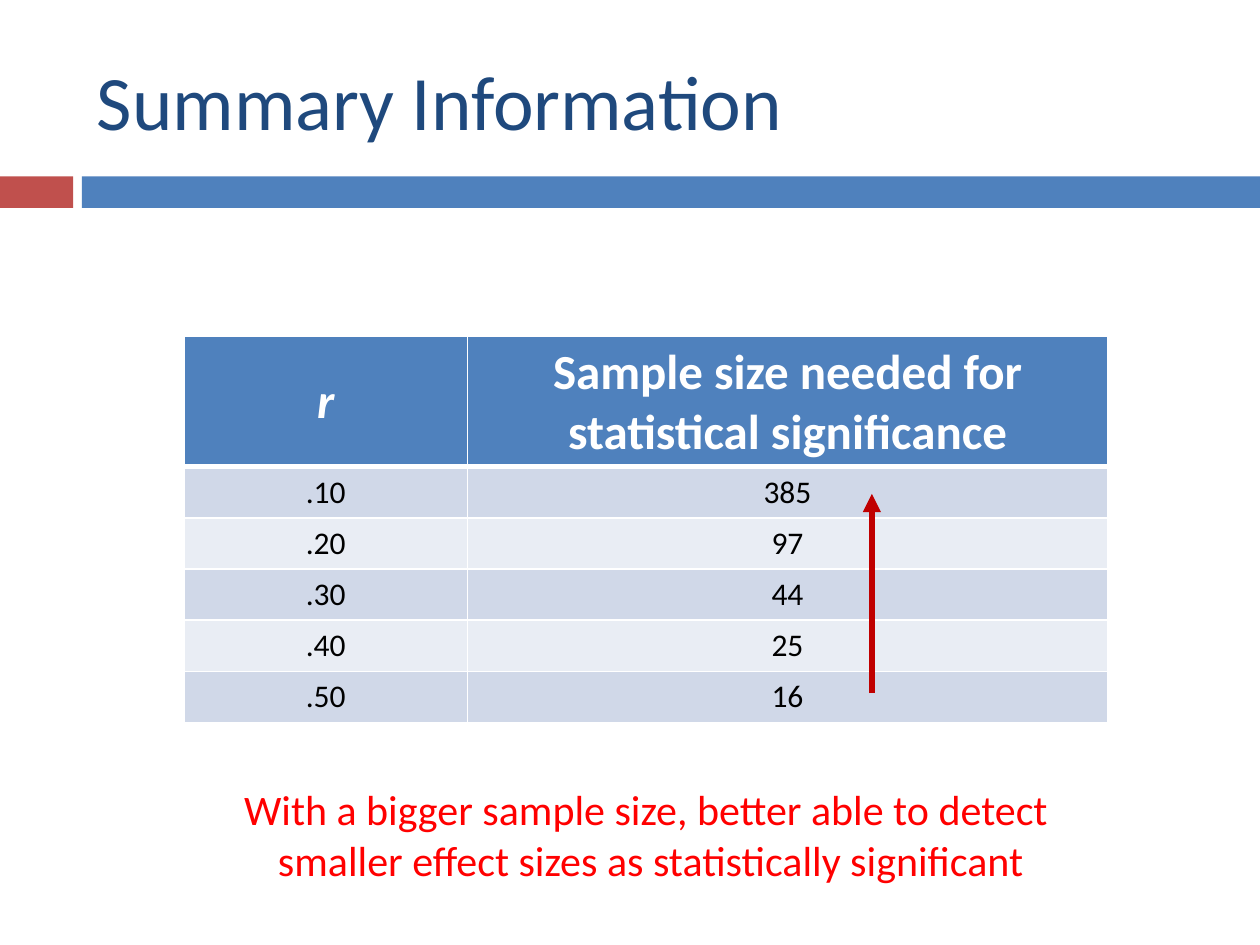
from lxml import etree
from pptx import Presentation
from pptx.dml.color import RGBColor
from pptx.enum.shapes import MSO_CONNECTOR, MSO_SHAPE
from pptx.enum.text import MSO_ANCHOR, PP_ALIGN
from pptx.oxml.ns import qn
from pptx.util import Inches, Pt

RECTANGLE = MSO_SHAPE.RECTANGLE
STRAIGHT = MSO_CONNECTOR.STRAIGHT
MIDDLE, TOP = MSO_ANCHOR.MIDDLE, MSO_ANCHOR.TOP
LEFT, CENTER = PP_ALIGN.LEFT, PP_ALIGN.CENTER

FONT = "Calibri"
COLORS = {
    "title": "1F497D", "accent": "C0504D", "bar": "4F81BD",
    "odd_row": "D0D8E8", "even_row": "E9EDF4", "white": "FFFFFF",
    "black": "000000", "conclusion": "FF0000", "arrow": "C00000",
}
HEADINGS = ["r", "Sample size needed for statistical significance"]
SAMPLE_SIZES = [(".10", "385"), (".20", "97"), (".30", "44"), (".40", "25"), (".50", "16")]
CONCLUSION = [
    "With a bigger sample size, better able to detect ",
    "smaller effect sizes as statistically significant",
]


def rgb(name):
    """Return the named palette colour."""
    return RGBColor.from_string(COLORS[name])


def add_run(paragraph, text, size, color, bold=False, italic=False):
    """Append one formatted run to a paragraph."""
    run = paragraph.add_run()
    run.text = text
    run.font.name, run.font.size = FONT, Pt(size)
    run.font.bold, run.font.italic = bold, italic
    run.font.color.rgb = rgb(color)


def add_text(slide, box, lines, size, color, align, anchor, wrap):
    """Place one paragraph of broken lines in a text box."""
    frame = slide.shapes.add_textbox(*map(Inches, box)).text_frame
    frame.word_wrap, frame.vertical_anchor = wrap, anchor
    paragraph = frame.paragraphs[0]
    paragraph.alignment = align
    for index, line in enumerate(lines):
        if index:
            paragraph.add_line_break()
        add_run(paragraph, line, size, color)


def add_divider(slide, left, top, width, height):
    """Draw the accent block and the bar beside it."""
    accent_width, gap = 0.58, 0.07
    bar_offset = accent_width + gap
    for offset, part_width, color in (
        (0, accent_width, "accent"),
        (bar_offset, width - bar_offset, "bar"),
    ):
        block = slide.shapes.add_shape(
            RECTANGLE, Inches(left + offset), Inches(top), Inches(part_width), Inches(height))
        block.shadow.inherit = False
        block.fill.solid()
        block.fill.fore_color.rgb = rgb(color)
        block.line.fill.background()


def set_borders(cell, bottom_width):
    """Give a cell white borders with its own bottom width."""
    properties = cell._tc.get_or_add_tcPr()
    for side, width in (("L", 1), ("R", 1), ("T", 1), ("B", bottom_width)):
        border = etree.SubElement(properties, qn(f"a:ln{side}"), w=str(Pt(width)))
        fill = etree.SubElement(border, qn("a:solidFill"))
        etree.SubElement(fill, qn("a:srgbClr"), val=COLORS["white"])


def fill_cell(cell, text, fill, size, color, anchor, bold=False, italic=False, bottom_width=1):
    """Style one table cell and write its text."""
    set_borders(cell, bottom_width)
    cell.fill.solid()
    cell.fill.fore_color.rgb = rgb(fill)
    cell.vertical_anchor = anchor
    paragraph = cell.text_frame.paragraphs[0]
    paragraph.alignment = CENTER
    add_run(paragraph, text, size, color, bold, italic)


def add_sample_table(slide, left, top, width, height):
    """Build the table of effect sizes and sample sizes."""
    effect_width, header_height = 2.25, 1.03
    row_height = (height - header_height) / len(SAMPLE_SIZES)
    table = slide.shapes.add_table(
        len(SAMPLE_SIZES) + 1, len(HEADINGS), *map(Inches, (left, top, width, height))).table
    table.columns[0].width = Inches(effect_width)
    table.columns[1].width = Inches(width - effect_width)
    for index, row in enumerate(table.rows):
        row.height = Inches(row_height if index else header_height)
    for column, heading in enumerate(HEADINGS):
        fill_cell(table.cell(0, column), heading, "bar", 28, "white", MIDDLE,
                  bold=True, italic=column == 0, bottom_width=3)
    for index, values in enumerate(SAMPLE_SIZES, start=1):
        fill = "odd_row" if index % 2 else "even_row"
        for column, value in enumerate(values):
            fill_cell(table.cell(index, column), value, fill, 18, "black",
                      TOP if column else MIDDLE)


def add_growth_arrow(slide, x, bottom, top):
    """Draw the upward arrow beside the sample sizes."""
    arrow = slide.shapes.add_connector(STRAIGHT, *map(Inches, (x, bottom, x, top)))
    arrow.line.color.rgb = rgb("arrow")
    arrow.line.width = Pt(3.5)
    etree.SubElement(arrow.line._get_or_add_ln(), qn("a:tailEnd"), type="triangle")
    etree.SubElement(arrow._element.spPr, qn("a:effectLst"))


def main():
    """Build and save the summary slide."""
    presentation = Presentation()
    presentation.slide_width, presentation.slide_height = Inches(10), Inches(7.5)
    slide = presentation.slides.add_slide(presentation.slide_layouts[6])
    add_divider(slide, 0, 1.4, 10, 0.25)
    add_text(slide, (0.67, 0.25, 8.92, 1.08), ["Summary Information"],
             44, "title", LEFT, MIDDLE, True)
    add_sample_table(slide, 1.46, 2.67, 7.33, 3.06)
    add_text(slide, (1.76, 6.17, 6.81, 0.91), CONCLUSION,
             24, "conclusion", CENTER, TOP, False)
    add_growth_arrow(slide, 6.92, 5.5, 3.92)
    presentation.save("out.pptx")


if __name__ == "__main__":
    main()
